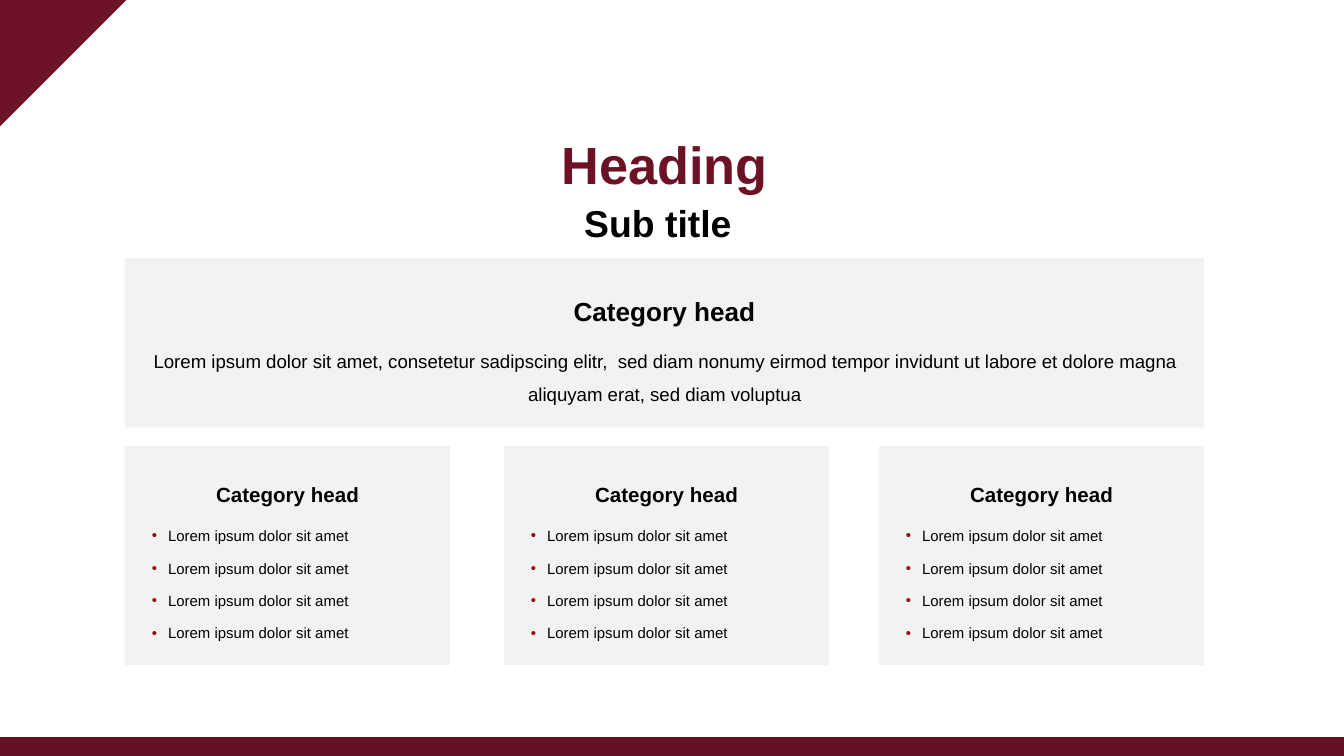
from lxml import etree
from pptx import Presentation
from pptx import util as u
from pptx.dml.color import RGBColor
from pptx.enum import shapes, text
from pptx.oxml.ns import qn

WINE = RGBColor(0x6D, 0x12, 0x26)
DARK_WINE = RGBColor(0x66, 0x10, 0x23)
BULLET_RED = RGBColor(0x99, 0x00, 0x00)
PALE_GREY = RGBColor(0xF2, 0xF2, 0xF2)
BLACK = RGBColor(0, 0, 0)
WHITE = RGBColor(0xFF, 0xFF, 0xFF)

SLIDE_WIDTH = 10
SLIDE_HEIGHT = SLIDE_WIDTH * 9 / 16
FOOTER_HEIGHT = 0.14
LEFT, CONTENT_WIDTH = 0.93, 8.03
CARD_LEFTS = (LEFT, 3.75, 6.54)
CARD_TOP, CARD_WIDTH, CARD_HEIGHT = 3.32, 2.42, 1.63

CATEGORY = "Category head"
INTRO = (
    "Lorem ipsum dolor sit amet, consetetur sadipscing elitr,  sed diam nonumy "
    "eirmod tempor invidunt ut labore et dolore magna aliquyam erat, sed diam voluptua"
)
CARD_ITEMS = ["Lorem ipsum dolor sit amet"] * 4

HEAD_SPACING = {"line_spacing": 1.5, "space_after": u.Pt(3)}
BODY_SPACING = {"line_spacing": 1.5, "space_before": u.Pt(3)}


def apply_format(target, values):
    for name, value in values.items():
        setattr(target, name, value)


def set_frame(frame, anchor, margins):
    """Set anchor, wrapping and margins (left, top, right, bottom, in inches)."""
    sides = ("margin_left", "margin_top", "margin_right", "margin_bottom")
    apply_format(frame, {"word_wrap": True, "vertical_anchor": anchor})
    apply_format(frame, {side: u.Inches(m) for side, m in zip(sides, margins)})


def write_line(paragraph, wording, size, bold=True, color=BLACK,
               align=text.PP_ALIGN.CENTER, spacing=None):
    apply_format(paragraph, {"alignment": align, **(spacing or {})})
    run = paragraph.add_run()
    run.text = wording
    apply_format(run.font, {"name": "Arial", "size": u.Pt(size), "bold": bold})
    run.font.color.rgb = color


def add_bullet(paragraph):
    properties = paragraph._p.get_or_add_pPr()
    properties.set("marL", str(u.Inches(0.12)))
    properties.set("indent", str(-u.Inches(0.12)))
    bullet_color = etree.SubElement(properties, qn("a:buClr"))
    etree.SubElement(bullet_color, qn("a:srgbClr"), val=str(BULLET_RED))
    etree.SubElement(properties, qn("a:buFont"), typeface="Arial")
    etree.SubElement(properties, qn("a:buChar"), char="•")


def add_block(slide, kind, box, fill):
    block = slide.shapes.add_shape(kind, *map(u.Inches, box))
    block.shadow.inherit = False
    block.fill.solid()
    block.fill.fore_color.rgb = fill
    block.line.fill.background()
    return block


def add_panel(slide, box, head_size):
    """Add a grey panel with its category head and return its text frame."""
    panel = add_block(slide, shapes.MSO_SHAPE.RECTANGLE, box, PALE_GREY)
    frame = panel.text_frame
    set_frame(frame, text.MSO_ANCHOR.MIDDLE, (0.2,) * 4)
    write_line(frame.paragraphs[0], CATEGORY, head_size, spacing=HEAD_SPACING)
    return frame


def add_intro(slide):
    frame = add_panel(slide, (LEFT, 1.92, CONTENT_WIDTH, 1.26), 14)
    write_line(frame.add_paragraph(), INTRO, 10, bold=False, spacing=BODY_SPACING)


def add_card(slide, left):
    frame = add_panel(slide, (left, CARD_TOP, CARD_WIDTH, CARD_HEIGHT), 11)
    for item in CARD_ITEMS:
        paragraph = frame.add_paragraph()
        add_bullet(paragraph)
        write_line(paragraph, item, 8, bold=False, align=text.PP_ALIGN.LEFT,
                   spacing=BODY_SPACING)


def add_decoration(slide):
    footer = (0, SLIDE_HEIGHT - FOOTER_HEIGHT, SLIDE_WIDTH, FOOTER_HEIGHT)
    add_block(slide, shapes.MSO_SHAPE.RECTANGLE, footer, DARK_WINE)
    corner = add_block(slide, shapes.MSO_SHAPE.RIGHT_TRIANGLE, (0, 0, 0.94, 0.94), WINE)
    corner.rotation = 90


def add_heading(slide):
    heading = slide.shapes.title
    apply_format(heading, {
        "left": u.Inches(LEFT), "top": u.Inches(0.51),
        "width": u.Inches(CONTENT_WIDTH), "height": u.Inches(0.94),
    })
    frame = heading.text_frame
    frame.auto_size = text.MSO_AUTO_SIZE.NONE
    set_frame(frame, text.MSO_ANCHOR.BOTTOM, (0,) * 4)
    write_line(frame.paragraphs[0], "Heading", 28, color=WINE)


def add_subtitle(slide):
    box = map(u.Inches, (LEFT, 1.49, CONTENT_WIDTH, 0.39))
    frame = slide.shapes.add_textbox(*box).text_frame
    set_frame(frame, text.MSO_ANCHOR.TOP, (0, 0, 0.1, 0.05))
    frame.auto_size = text.MSO_AUTO_SIZE.SHAPE_TO_FIT_TEXT
    write_line(frame.paragraphs[0], "Sub title", 20)


def main():
    deck = Presentation()
    deck.slide_width = u.Inches(SLIDE_WIDTH)
    deck.slide_height = u.Inches(SLIDE_HEIGHT)
    slide = deck.slides.add_slide(deck.slide_layouts.get_by_name("Title Only"))
    slide.background.fill.solid()
    slide.background.fill.fore_color.rgb = WHITE

    add_decoration(slide)
    add_heading(slide)
    add_subtitle(slide)
    add_intro(slide)
    for left in CARD_LEFTS:
        add_card(slide, left)
    deck.save("out.pptx")


if __name__ == "__main__":
    main()
